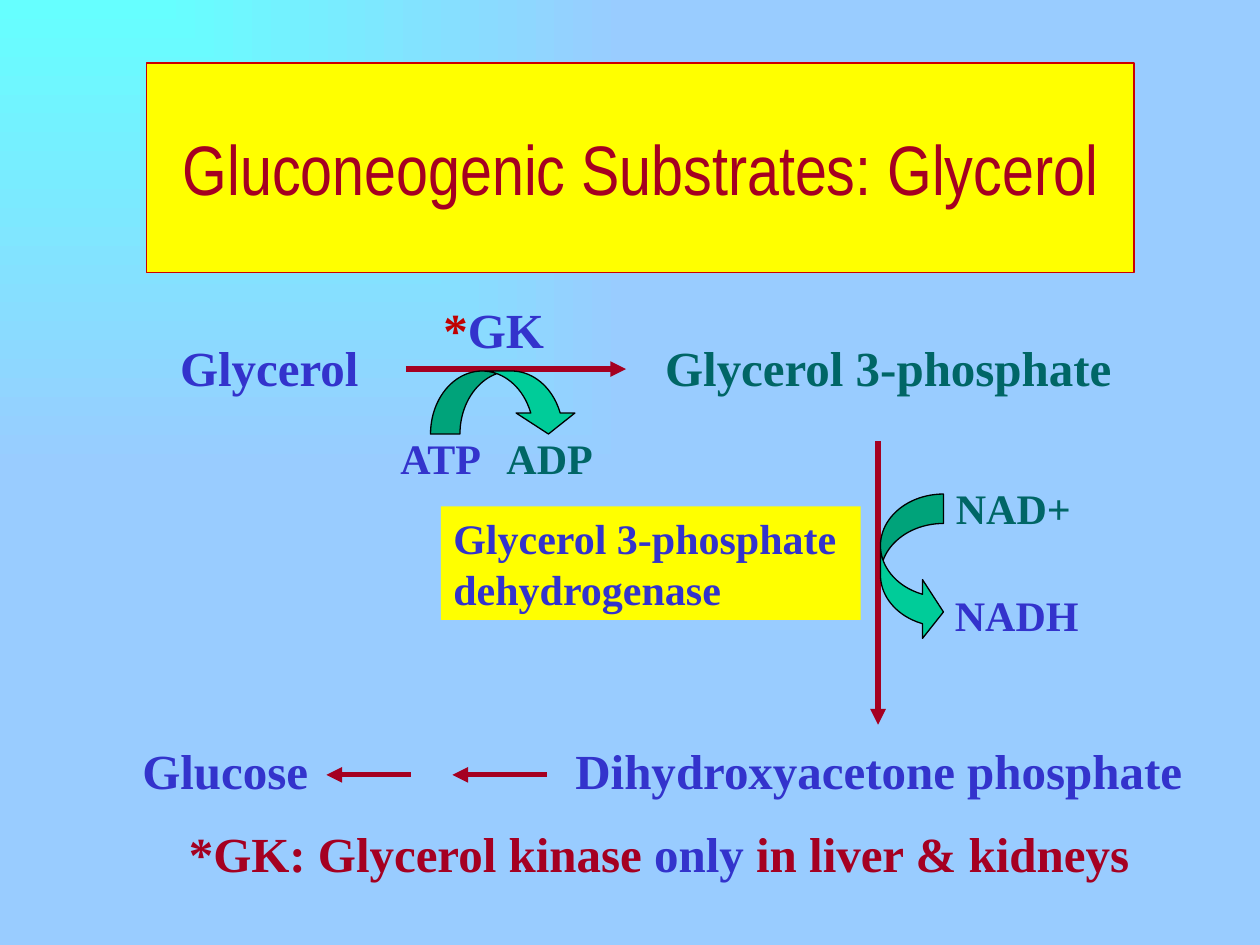
from lxml.etree import SubElement
from pptx import Presentation
from pptx.dml.color import RGBColor
from pptx.enum.shapes import MSO_CONNECTOR, MSO_SHAPE
from pptx.enum.text import MSO_ANCHOR, PP_ALIGN
from pptx.oxml.ns import qn
from pptx.util import Cm, Pt

COLORS = {
    "aqua": "66FFFF", "sky": "99CCFF", "yellow": "FFFF00", "red": "CC0000",
    "star": "C00000", "maroon": "A50021", "blue": "3333CC", "teal": "006666",
    "green": "00CC99", "black": "000000",
}
SERIF = "Times New Roman"
LARGE = {"name": SERIF, "size": Pt(28), "bold": True}
MEDIUM = {"name": SERIF, "size": Pt(24), "bold": True}
HEADING = {"name": "Arial Narrow", "size": Pt(40), "bold": False}

TITLE = [[("Gluconeogenic Substrates: Glycerol", "maroon")]]
ENZYME = [[("Glycerol 3-phosphate", "blue")], [("dehydrogenase", "blue")]]

SUBSTRATE_TOP, PRODUCT_TOP, COFACTOR_TOP = 6.68, 14.81, 8.59
LARGE_HEIGHT, MEDIUM_HEIGHT = 1.44, 1.27
LARGE_LABELS = [
    (3.38, SUBSTRATE_TOP, 4.37, [("Glycerol", "blue")]),
    (13.16, SUBSTRATE_TOP, 9.55, [("Glycerol 3-phosphate", "teal")]),
    (8.69, 5.92, 2.54, [("*", "star"), ("GK", "blue")]),
    (11.35, PRODUCT_TOP, 12.78, [("Dihydroxyacetone phosphate", "blue")]),
    (2.62, PRODUCT_TOP, 3.86, [("Glucose", "blue")]),
    (3.56, 16.48, 19.51, [("*GK: Glycerol kinase ", "maroon"), ("only", "blue"),
                          (" in liver & kidneys", "maroon")]),
]
MEDIUM_LABELS = [
    (19.02, 9.6, 2.82, [("NAD+", "teal")]),
    (19, 11.76, 3, [("NADH", "blue")]),
    (7.82, COFACTOR_TOP, 2.21, [("ATP", "blue")]),
    (9.96, COFACTOR_TOP, 2.26, [("ADP", "teal")]),
]
REACTIONS = [
    (8.18, 7.44, 12.62, 7.44),
    (17.7, 8.89, 17.7, 14.61),
    (11.02, 15.62, 9.12, 15.62),
    (8.28, 15.62, 6.58, 15.62),
]
COFACTOR_ARROWS = [(17.75, 9.96, 0, False), (9.53, 6.63, 270, True)]
ARROW_SIZE = (1.27, 2.97)
ARROW_ADJUSTMENTS = (0.467, 0.933, 0.333)


def color(name):
    return RGBColor.from_string(COLORS[name])


def paint_background(slide):
    fill = slide.background.fill
    fill.gradient()
    for stop, name in zip(fill.gradient_stops, ("aqua", "sky")):
        stop.color.rgb = color(name)
    linear = next(slide._element.iter(qn("a:lin")))
    gradient = linear.getparent()
    gradient.remove(linear)
    shade = SubElement(gradient, qn("a:path"), {"path": "rect"})
    SubElement(shade, qn("a:fillToRect"), {"r": "100000", "b": "100000"})


def write(shape, paragraphs, style, align=PP_ALIGN.LEFT, anchor=MSO_ANCHOR.TOP):
    frame = shape.text_frame
    frame.word_wrap = False
    frame.vertical_anchor = anchor
    for index, runs in enumerate(paragraphs):
        paragraph = frame.add_paragraph() if index else frame.paragraphs[0]
        paragraph.alignment = align
        for text, name in runs:
            run = paragraph.add_run()
            run.text = text
            run.font.color.rgb = color(name)
            for attribute, value in style.items():
                setattr(run.font, attribute, value)


def add_filled(slide, kind, box, fill, line=None):
    shape = slide.shapes.add_shape(kind, *map(Cm, box))
    shape.shadow.inherit = False
    shape.fill.solid()
    shape.fill.fore_color.rgb = color(fill)
    if line:
        shape.line.color.rgb = color(line)
        shape.line.width = Pt(0.75)
    else:
        shape.line.fill.background()
    return shape


def add_reaction(slide, points):
    connector = slide.shapes.add_connector(MSO_CONNECTOR.STRAIGHT, *map(Cm, points))
    connector.line.color.rgb = color("maroon")
    connector.line.width = Pt(3)
    SubElement(connector.line._get_or_add_ln(), qn("a:tailEnd"), {"type": "triangle"})
    SubElement(connector._element.spPr, qn("a:effectLst"))


def add_cofactor_arrow(slide, left, top, rotation, flipped):
    arrow = add_filled(slide, MSO_SHAPE.CURVED_RIGHT_ARROW,
                       (left, top, *ARROW_SIZE), "green", "black")
    for index, value in enumerate(ARROW_ADJUSTMENTS):
        arrow.adjustments[index] = value
    arrow.rotation = rotation
    if flipped:
        arrow._element.spPr.find(qn("a:xfrm")).set("flipH", "1")


def main():
    presentation = Presentation()
    presentation.slide_width, presentation.slide_height = Cm(25.4), Cm(19.05)
    slide = presentation.slides.add_slide(presentation.slide_layouts[6])
    paint_background(slide)

    title = add_filled(slide, MSO_SHAPE.RECTANGLE, (2.96, 1.27, 19.9, 4.23), "yellow", "red")
    write(title, TITLE, HEADING, PP_ALIGN.CENTER, MSO_ANCHOR.MIDDLE)
    for points in REACTIONS:
        add_reaction(slide, points)
    enzyme = add_filled(slide, MSO_SHAPE.RECTANGLE, (8.89, 10.21, 8.46, 2.29), "yellow")
    write(enzyme, ENZYME, MEDIUM)
    for arrow in COFACTOR_ARROWS:
        add_cofactor_arrow(slide, *arrow)
    for labels, height, style in ((LARGE_LABELS, LARGE_HEIGHT, LARGE),
                                  (MEDIUM_LABELS, MEDIUM_HEIGHT, MEDIUM)):
        for left, top, width, runs in labels:
            box = slide.shapes.add_textbox(*map(Cm, (left, top, width, height)))
            write(box, [runs], style)

    presentation.save("out.pptx")


if __name__ == "__main__":
    main()
